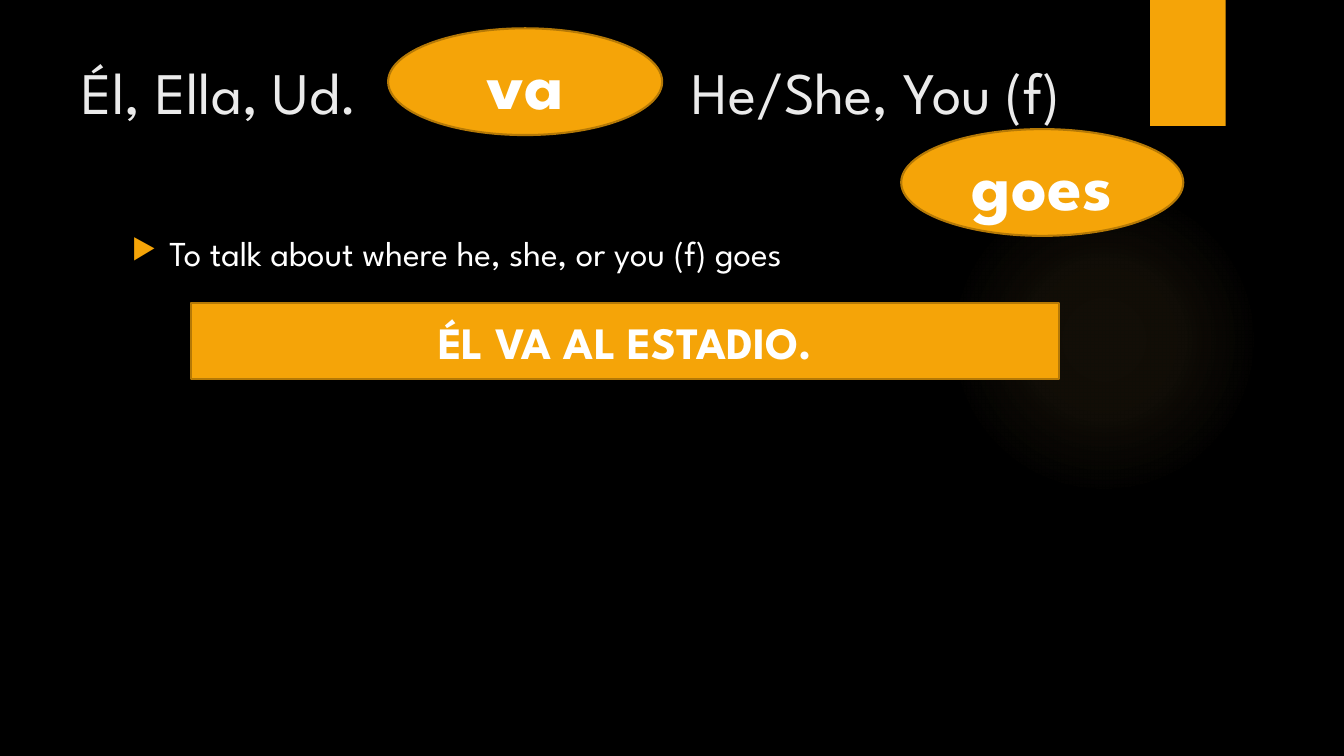
from lxml import etree
from pptx import Presentation
from pptx.dml.color import RGBColor
from pptx.enum.shapes import MSO_SHAPE as Shape
from pptx.enum.text import MSO_ANCHOR as Anchor, MSO_AUTO_SIZE as Auto, PP_ALIGN as Align
from pptx.oxml import parse_xml
from pptx.oxml.ns import nsdecls, qn
from pptx.util import Pt

BLACK = RGBColor(0x00, 0x00, 0x00)
WHITE = RGBColor(0xFF, 0xFF, 0xFF)
PALE = RGBColor(0xEB, 0xEB, 0xEB)
GOLD = RGBColor(0xF5, 0xA4, 0x08)
BROWN = RGBColor(0xB5, 0x79, 0x06)
GLOW = RGBColor(0xFA, 0xC9, 0x6A)


class Page:
    """Holds the style and the current slide."""

    font = "League Spartan"

    def __init__(self, deck):
        self.slide = deck.slides.add_slide(deck.slide_layouts[5])
        fill = self.slide.background.fill
        fill.solid()
        fill.fore_color.rgb = BLACK

    def add_text(self, para, text, size, color, bold=False):
        run = para.add_run()
        run.text = text
        font = run.font
        font.name, font.size, font.bold = self.font, Pt(size), bold
        font.color.rgb = color

    def shape(self, kind, box, line=None):
        item = self.slide.shapes.add_shape(kind, *map(Pt, box))
        item.shadow.inherit = False
        item.fill.solid()
        item.fill.fore_color.rgb = GOLD
        if line is None:
            item.line.fill.background()
        else:
            item.line.color.rgb = line
            item.line.width = Pt(1.5)
        return item

    def label(self, kind, box, text, size):
        frame = self.shape(kind, box, BROWN).text_frame
        frame.word_wrap = True
        frame.vertical_anchor = Anchor.MIDDLE
        para = frame.paragraphs[0]
        para.alignment = Align.CENTER
        self.add_text(para, text, size, WHITE, True)

    def glow(self, box, stops):
        """Draws a round glow; stops are (position, opacity) in percent."""
        props = self.shape(Shape.OVAL, box)._element.spPr
        marks = "".join(
            f'<a:gs pos="{pos * 1000}"><a:srgbClr val="{GLOW}">'
            f'<a:alpha val="{alpha * 1000}"/></a:srgbClr></a:gs>'
            for pos, alpha in stops)
        grad = parse_xml(
            f'<a:gradFill {nsdecls("a")}><a:gsLst>{marks}</a:gsLst>'
            '<a:path path="circle"><a:fillToRect l="50000" t="50000" '
            'r="50000" b="50000"/></a:path></a:gradFill>')
        props.replace(props.find(qn("a:solidFill")), grad)

    def ribbon(self, box):
        props = self.shape(Shape.RECTANGLE, box)._element.spPr
        props.find(qn("a:effectLst")).append(parse_xml(
            f'<a:outerShdw {nsdecls("a")} blurRad="{Pt(3)}" dist="{Pt(2)}" '
            'dir="5400000" rotWithShape="0"><a:srgbClr val="000000">'
            '<a:alpha val="45000"/></a:srgbClr></a:outerShdw>'))

    def title(self, box, text, tab):
        item = self.slide.shapes.title
        item.left, item.top, item.width, item.height = map(Pt, box)
        frame = item.text_frame
        frame.word_wrap = True
        frame.auto_size = Auto.NONE
        frame.vertical_anchor = Anchor.TOP
        para = frame.paragraphs[0]
        para.alignment = Align.LEFT
        tabs = etree.SubElement(para._p.get_or_add_pPr(), qn("a:tabLst"))
        etree.SubElement(tabs, qn("a:tab"), pos=str(Pt(tab)), algn="l")
        self.add_text(para, text, 42, PALE)

    def bullet(self, box, text):
        frame = self.slide.shapes.add_textbox(*map(Pt, box)).text_frame
        frame.word_wrap = True
        para = frame.paragraphs[0]
        props = para._p.get_or_add_pPr()
        props.set("marL", str(Pt(27)))
        props.set("indent", str(Pt(-27)))
        color = etree.SubElement(props, qn("a:buClr"))
        etree.SubElement(color, qn("a:srgbClr"), val=str(GOLD))
        etree.SubElement(props, qn("a:buSzPct"), val="80000")
        etree.SubElement(props, qn("a:buChar"), char="▶")
        self.add_text(para, text, 25, WHITE)


def main():
    deck = Presentation()
    deck.slide_width, deck.slide_height = Pt(960), Pt(540)
    page = Page(deck)
    page.glow((677.5, 131.75, 221.75, 221.75), [(0, 7), (36, 6), (69, 0)])
    page.ribbon((821.5, 0, 54, 90))
    page.title((51, 36, 814.25, 110.25), "Él, Ella, Ud.\tHe/She, You (f)", 436)
    page.bullet((87, 162, 704.25, 330.5),
                "To talk about where he, she, or you (f) goes")
    page.label(Shape.OVAL, (277.25, 20.25, 195.75, 76.25), "va", 50)
    page.label(Shape.RECTANGLE, (136.75, 216.75, 620, 54),
               "ÉL VA AL ESTADIO.", 32)
    page.label(Shape.OVAL, (643.75, 92.25, 201.5, 76.25), "goes", 50)
    deck.save("out.pptx")


if __name__ == "__main__":
    main()
